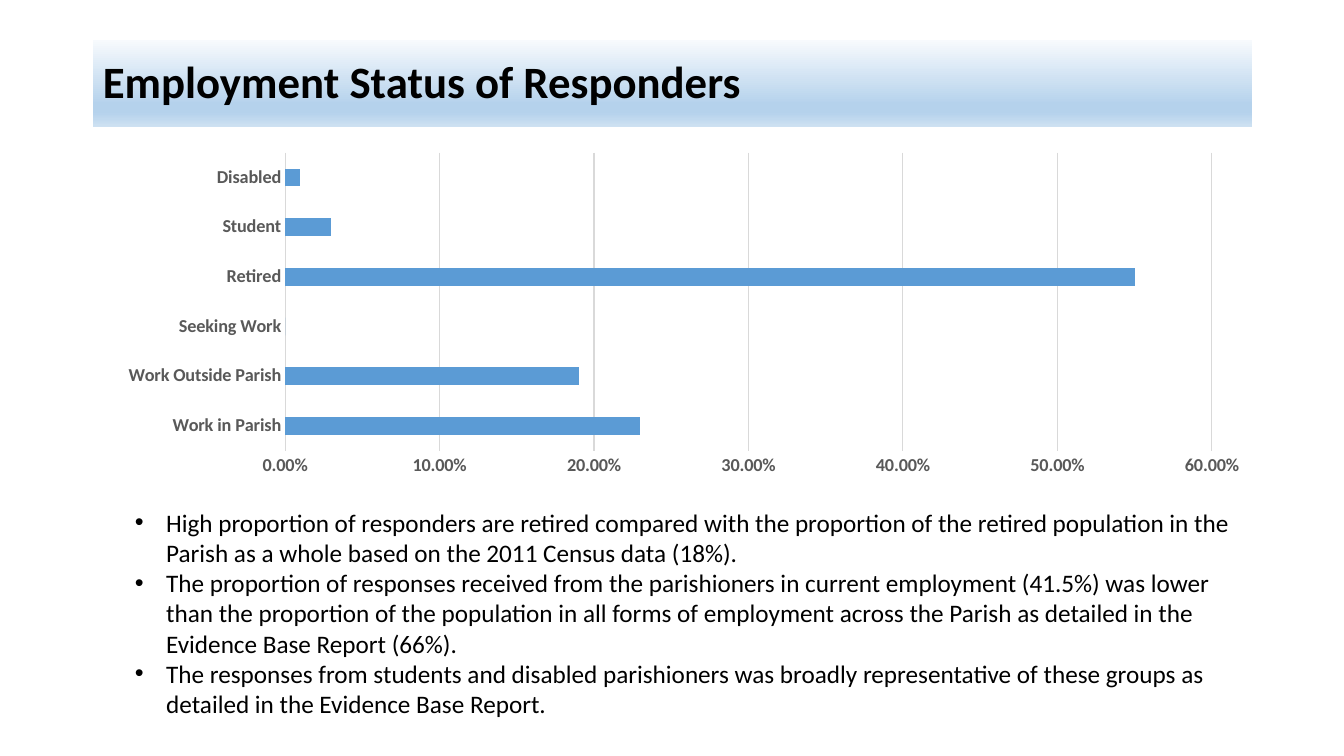
"""Build the slide on the employment status of survey responders."""
from typing import Any, NamedTuple

from lxml.etree import SubElement
from pptx import Presentation
from pptx.chart.data import CategoryChartData
from pptx.dml.color import RGBColor
from pptx.enum.chart import XL_CHART_TYPE as ChartType, XL_TICK_MARK as TickMark
from pptx.enum.text import MSO_ANCHOR as Anchor, MSO_AUTO_SIZE as AutoSize, PP_ALIGN as Align
from pptx.oxml.ns import qn
from pptx.util import Emu, Pt

PX = 9144
FONT = "Calibri"
COLORS = {"text": "000000", "axis": "595959", "grid": "D9D9D9", "bar": "5B9BD5"}


class Box(NamedTuple):
    left: int
    top: int
    width: int
    height: int

    def emu(self) -> list[Emu]:
        return [Emu(length * PX) for length in self]


class Status(NamedTuple):
    label: str
    share: float


class Stop(NamedTuple):
    percent: int
    color: str


BANNER_STOPS = (Stop(0, "F7FAFD"), Stop(74, "B5D2EC"), Stop(83, "B5D2EC"), Stop(100, "CEE1F2"))
STATUSES = (
    Status("Work in Parish", 0.23),
    Status("Work Outside Parish", 0.19),
    Status("Seeking Work", 0),
    Status("Retired", 0.55),
    Status("Student", 0.03),
    Status("Disabled", 0.01),
)
FINDINGS = (
    "High proportion of responders are retired compared with the proportion of the retired "
    "population in the Parish as a whole based on the 2011 Census data (18%).",
    "The proportion of responses received from the parishioners in current employment (41.5%) "
    "was lower than the proportion of the population in all forms of employment across the "
    "Parish as detailed in the Evidence Base Report (66%).",
    "The responses from students and disabled parishioners was broadly representative of these "
    "groups as detailed in the Evidence Base Report.",
)
PLOT_MODES = {"layoutTarget": "inner", "xMode": "edge", "yMode": "edge"}
PLOT_THOUSANDTHS = {"x": 160, "y": 49, "w": 805, "h": 831}


def assign(target: Any, values: dict[str, Any]) -> None:
    for name, value in values.items():
        setattr(target, name, value)


def style_font(font: Any, size: int, color: str, bold: bool = False) -> None:
    assign(font, {"name": FONT, "size": Pt(size), "bold": bold})
    font.color.rgb = RGBColor.from_string(COLORS[color])


def place(shape: Any, box: Box) -> None:
    assign(shape, dict(zip(("left", "top", "width", "height"), box.emu())))


def fill_banner(banner: Any) -> None:
    banner.fill.gradient()
    banner.fill.gradient_angle = 270
    stops = banner.element.spPr.find(".//" + qn("a:gsLst"))
    for old in list(stops):
        stops.remove(old)
    for stop in BANNER_STOPS:
        node = SubElement(stops, qn("a:gs"), pos=str(stop.percent * 1000))
        SubElement(node, qn("a:srgbClr"), val=stop.color)


def add_heading(slide: Any, box: Box) -> None:
    heading = slide.shapes.title
    place(heading, box)
    fill_banner(heading)
    frame = heading.text_frame
    frame.text = "Employment Status of Responders"
    assign(frame, {"vertical_anchor": Anchor.MIDDLE, "auto_size": AutoSize.NONE, "word_wrap": True})
    line = frame.paragraphs[0]
    assign(line, {"alignment": Align.LEFT, "line_spacing": 0.9})
    style_font(line.runs[0].font, 32, "text", True)


def add_findings(slide: Any, box: Box) -> None:
    frame = slide.shapes.add_textbox(*box.emu()).text_frame
    assign(frame, {"word_wrap": True, "auto_size": AutoSize.SHAPE_TO_FIT_TEXT})
    frame.text = "\n".join(FINDINGS)
    indent = 31 * PX
    for finding in frame.paragraphs:
        style_font(finding.runs[0].font, 18, "text")
        props = finding._p.get_or_add_pPr()
        props.set("marL", str(indent))
        props.set("indent", str(-indent))
        SubElement(props, qn("a:buFont"), typeface="Arial")
        SubElement(props, qn("a:buChar"), char="•")


def style_line(line: Any) -> None:
    line.color.rgb = RGBColor.from_string(COLORS["grid"])
    line.width = Pt(0.75)


def add_status_chart(slide: Any, box: Box) -> None:
    data = CategoryChartData(number_format="0.00%")
    data.categories = [status.label for status in STATUSES]
    data.add_series("Series 1", [status.share for status in STATUSES])
    chart = slide.shapes.add_chart(ChartType.BAR_CLUSTERED, *box.emu(), data).chart
    assign(chart, {"has_legend": False, "has_title": False})
    style_font(chart.font, 10, "text")

    statuses, shares = chart.category_axis, chart.value_axis
    for axis in (statuses, shares):
        assign(axis, {"major_tick_mark": TickMark.NONE, "minor_tick_mark": TickMark.NONE})
        style_font(axis.tick_labels.font, 13, "axis", True)
    style_line(statuses.format.line)
    assign(shares, {"minimum_scale": 0, "maximum_scale": 0.6, "major_unit": 0.1})
    assign(shares.tick_labels, {"number_format": "0.00%", "number_format_is_linked": False})
    shares.format.line.fill.background()
    style_line(shares.major_gridlines.format.line)

    bars = chart.plots[0]
    assign(bars, {"gap_width": 182, "vary_by_categories": False})
    bar_fill = bars.series[0].format.fill
    bar_fill.solid()
    bar_fill.fore_color.rgb = RGBColor.from_string(COLORS["bar"])

    plot_area = chart.element.find(".//" + qn("c:plotArea"))
    for old in plot_area.findall(qn("c:layout")):
        plot_area.remove(old)
    layout = SubElement(plot_area, qn("c:layout"))
    plot_area.insert(0, layout)
    manual = SubElement(layout, qn("c:manualLayout"))
    fractions = {name: part / 1000 for name, part in PLOT_THOUSANDTHS.items()}
    for name, value in (PLOT_MODES | fractions).items():
        SubElement(manual, qn(f"c:{name}"), val=str(value))


def main() -> None:
    deck = Presentation()
    assign(deck, {"slide_width": Emu(1333 * PX), "slide_height": Emu(750 * PX)})
    slide = deck.slides.add_slide(deck.slide_layouts[5])
    add_heading(slide, Box(92, 40, 1150, 86))
    add_findings(slide, Box(124, 498, 1110, 222))
    add_status_chart(slide, Box(100, 134, 1142, 356))
    deck.save("out.pptx")


if __name__ == "__main__":
    main()
